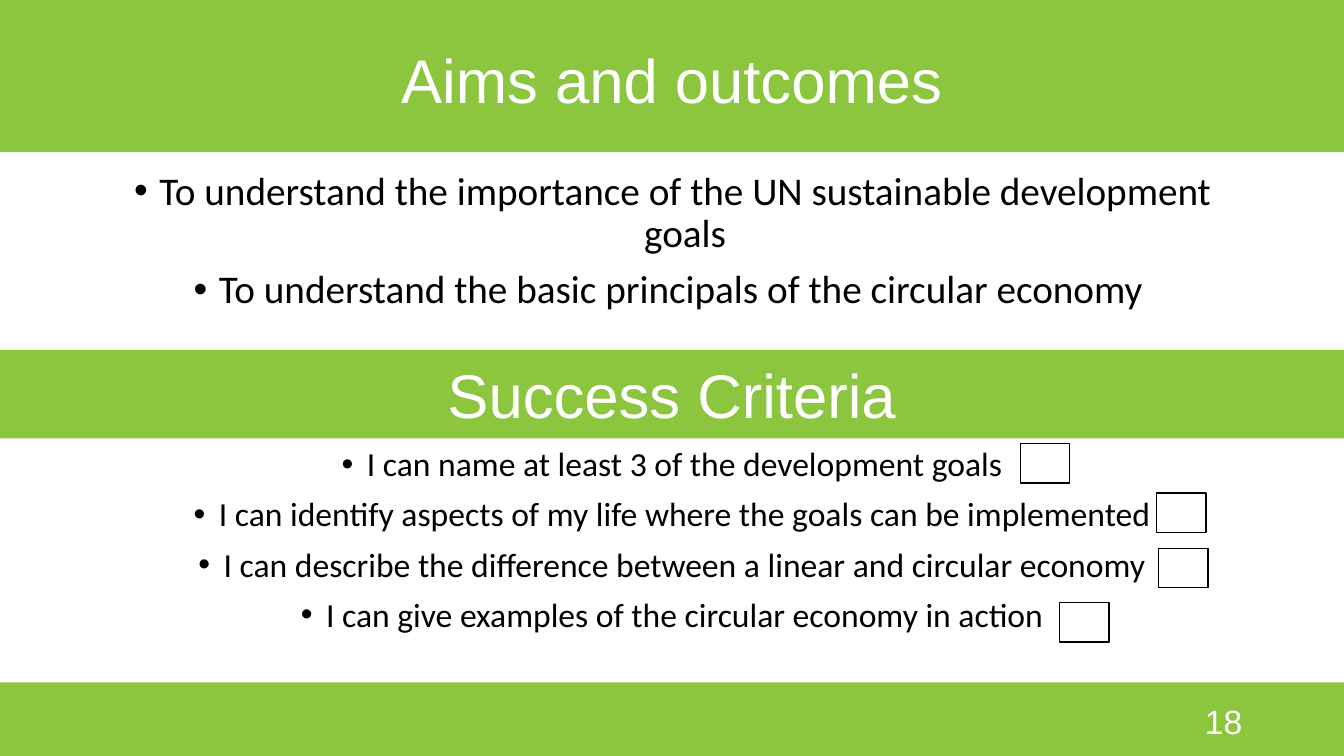
from lxml.etree import SubElement
from pptx import Presentation
from pptx.dml.color import RGBColor
from pptx.enum.shapes import MSO_SHAPE
from pptx.enum.text import MSO_ANCHOR, PP_ALIGN
from pptx.oxml.ns import qn
from pptx.util import Inches, Pt

GREEN, WHITE, BLACK = "8CC63F", "FFFFFF", "000000"


def paint(color, value):
    color.rgb = RGBColor.from_string(value)


def write(shape, lines, size, face, hue, align=PP_ALIGN.CENTER, anchor=MSO_ANCHOR.MIDDLE, bullet=False):
    frame = shape.text_frame
    frame.text = "\n".join(lines)
    for key, value in {"word_wrap": True, "vertical_anchor": anchor}.items():
        setattr(frame, key, value)
    for row, para in enumerate(frame.paragraphs):
        if bullet:
            props = para._p.get_or_add_pPr()
            props.set("marL", str(Inches(0.25)))
            props.set("indent", str(Inches(-0.25)))
            SubElement(props, qn("a:buFont")).set("typeface", "Arial")
            SubElement(props, qn("a:buChar")).set("char", "•")
        look = {"alignment": align, "line_spacing": 0.9 if bullet else 1.0,
                "space_before": Pt(10 if bullet and row else 0)}
        for key, value in look.items():
            setattr(para, key, value)
        for key, value in {"size": Pt(size), "name": face}.items():
            setattr(para.font, key, value)
        paint(para.font.color, hue)


deck = Presentation()
deck.slide_width, deck.slide_height = Inches(13.33), Inches(7.5)
slide = deck.slides.add_slide(deck.slide_layouts[1])
shapes = slide.shapes
title, body = shapes.title, slide.placeholders[1]

bands = []
for top, height in [(6.77, 0.73), (0, 1.51), (3.47, 0.88)]:
    band = shapes.add_shape(MSO_SHAPE.RECTANGLE, 0, Inches(top), deck.slide_width, Inches(height))
    band.shadow.inherit = False
    band.fill.solid()
    paint(band.fill.fore_color, GREEN)
    band.line.fill.background()
    title.element.addprevious(band.element)
    bands.append(band)

spots = [(title, 0, 0.06, 13.33, 1.45), (body, 0.92, 1.65, 11.5, 1.72)]
for shape, *box in spots:
    for key, value in zip(("left", "top", "width", "height"), box):
        setattr(shape, key, Inches(value))

write(title, ["Aims and outcomes"], 44, "Arial", WHITE)
write(bands[2], ["Success Criteria"], 44, "Arial", WHITE)
write(body, [
    "To understand the importance of the UN sustainable development goals",
    "To understand the basic principals of the circular economy ",
], 28, "Calibri", BLACK, anchor=MSO_ANCHOR.TOP, bullet=True)

goals = shapes.add_textbox(0, Inches(4.39), deck.slide_width, Inches(2.37))
write(goals, [
    "I can name at least 3 of the development goals",
    "I can identify aspects of my life where the goals can be implemented",
    "I can describe the difference between a linear and circular economy",
    "I can give examples of the circular economy in action",
], 24, "Calibri", BLACK, anchor=MSO_ANCHOR.TOP, bullet=True)

page = shapes.add_textbox(Inches(9.42), Inches(6.95), Inches(3), Inches(0.4))
write(page, ["18"], 24, "Arial", WHITE, align=PP_ALIGN.RIGHT)

for left, top in [(10.12, 4.4), (11.47, 4.89), (11.49, 5.44), (10.51, 5.98)]:
    check = shapes.add_shape(MSO_SHAPE.RECTANGLE, Inches(left), Inches(top), Inches(0.49), Inches(0.39))
    check.shadow.inherit = False
    check.fill.background()
    paint(check.line.color, BLACK)
    check.line.width = Pt(1)

deck.save("out.pptx")
